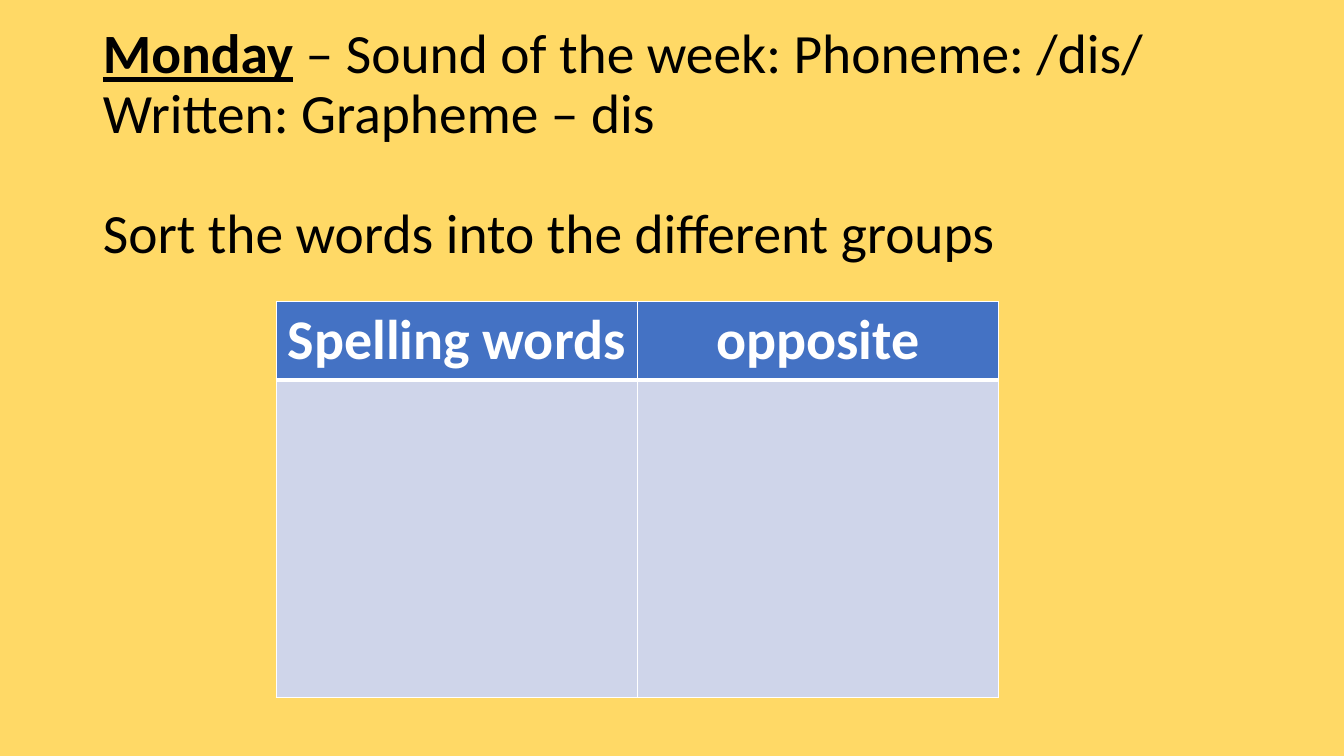
"""Build the Monday spelling slide with a word-sorting table."""
from lxml.etree import SubElement
from pptx import Presentation
from pptx.dml.color import RGBColor
from pptx.enum.text import MSO_ANCHOR, MSO_AUTO_SIZE, PP_ALIGN
from pptx.oxml.ns import qn
from pptx.util import Inches, Pt

FONT = "Calibri"
COLORS = {"background": "FFD966", "text": "000000", "white": "FFFFFF",
          "header": "4472C4", "body": "CFD5EA"}
DAY = "Monday"
SOUND = " – Sound of the week: Phoneme: /dis/ \vWritten: Grapheme – dis"
TASK = "Sort the words into the different groups"
HEADINGS = ["Spelling words", "opposite"]
TITLE_BOX = (0.92, 0.72, 11.5, 1.45)
TABLE_LEFT, TABLE_TOP, COLUMN_WIDTH = 2.74, 2.99, 3.58
ROWS = [("header", 0.77, {"L": 1, "R": 1, "T": 1, "B": 3}),
        ("body", 3.15, {"L": 1, "R": 1, "T": 3, "B": 1})]


def rgb(name):
    return RGBColor.from_string(COLORS[name])


def style_runs(p, size, color, bold):
    for r in p.runs:
        r.font.name, r.font.size, r.font.bold = FONT, Pt(size), bold
        r.font.color.rgb = rgb(color)


def add_borders(cell, widths):
    tc_pr = cell._tc.get_or_add_tcPr()
    for side, width in widths.items():
        ln = SubElement(tc_pr, qn(f"a:ln{side}"), w=str(Pt(width)))
        fill = SubElement(ln, qn("a:solidFill"))
        SubElement(fill, qn("a:srgbClr"), val=COLORS["white"])


def add_title(slide):
    sp = slide.shapes.title
    sp.left, sp.top, sp.width, sp.height = map(Inches, TITLE_BOX)
    tf = sp.text_frame
    tf.word_wrap = True
    tf.auto_size = MSO_AUTO_SIZE.NONE
    tf.vertical_anchor = MSO_ANCHOR.MIDDLE
    tf.text = SOUND
    sound = tf.paragraphs[0]
    task = tf.add_paragraph()
    task.text = TASK
    task.space_before = Pt(43)
    for p in (sound, task):
        p.alignment = PP_ALIGN.LEFT
        p.line_spacing = 0.9
        style_runs(p, 39.6, "text", False)
    first = sound.runs[0]
    day = sound.add_run()
    day.text = DAY
    first._r.addprevious(day._r)
    day.font.name, day.font.size = FONT, Pt(39.6)
    day.font.bold = day.font.underline = True
    day.font.color.rgb = rgb("text")


def add_sorting_table(slide):
    width = COLUMN_WIDTH * len(HEADINGS)
    height = sum(row[1] for row in ROWS)
    box = map(Inches, (TABLE_LEFT, TABLE_TOP, width, height))
    table = slide.shapes.add_table(len(ROWS), len(HEADINGS), *box).table
    for i, (color, row_height, borders) in enumerate(ROWS):
        table.rows[i].height = Inches(row_height)
        for cell in table.rows[i].cells:
            add_borders(cell, borders)
            cell.fill.solid()
            cell.fill.fore_color.rgb = rgb(color)
    for i, heading in enumerate(HEADINGS):
        table.columns[i].width = Inches(COLUMN_WIDTH)
        cell = table.cell(0, i)
        cell.text = heading
        p = cell.text_frame.paragraphs[0]
        p.alignment = PP_ALIGN.CENTER
        style_runs(p, 40, "white", True)


def main():
    prs = Presentation()
    prs.slide_width, prs.slide_height = Inches(13.33), Inches(7.5)
    slide = prs.slides.add_slide(prs.slide_layouts[5])
    slide.background.fill.solid()
    slide.background.fill.fore_color.rgb = rgb("background")
    add_title(slide)
    add_sorting_table(slide)
    prs.save("out.pptx")


if __name__ == "__main__":
    main()
